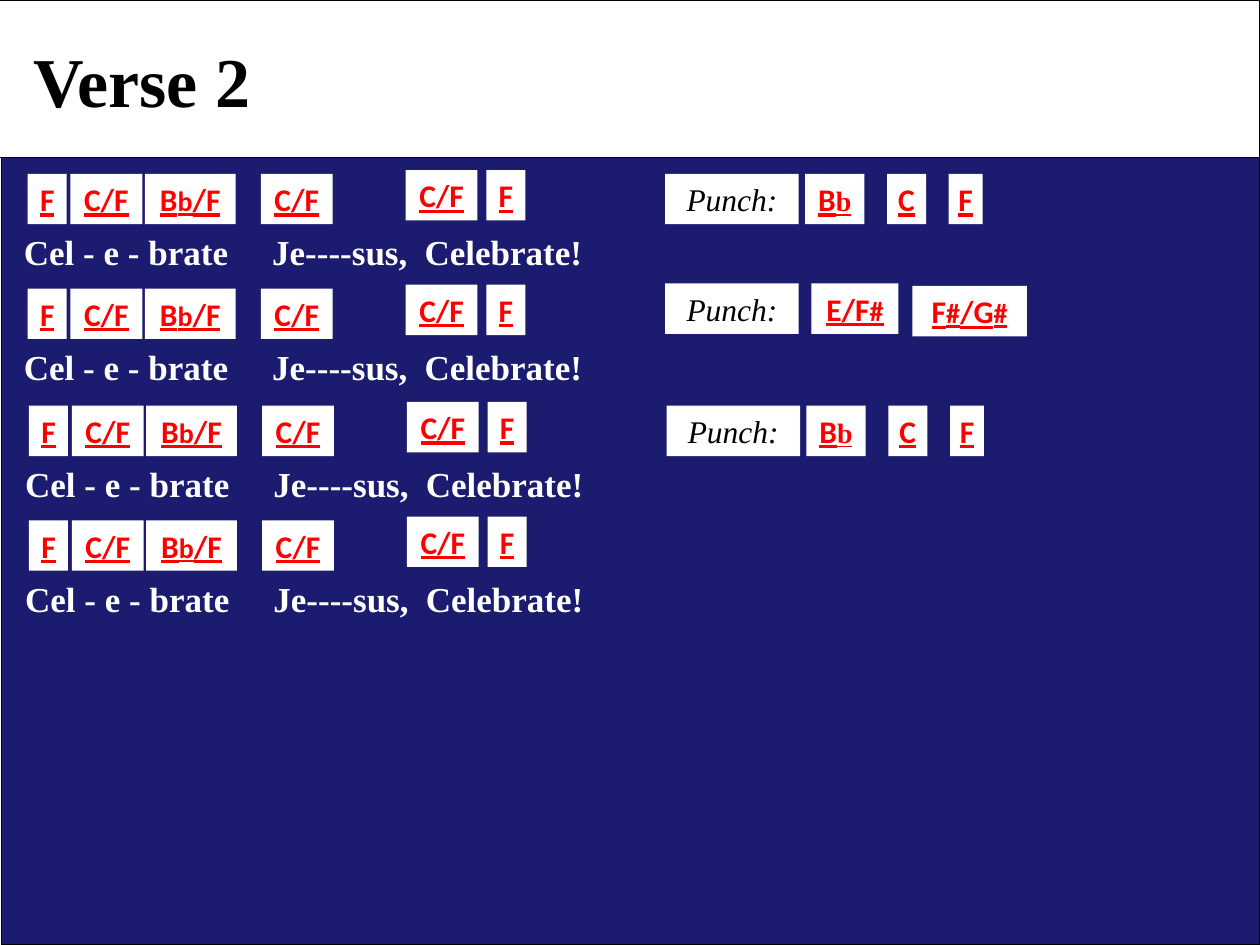
from dataclasses import dataclass
from itertools import groupby

from lxml import etree
from pptx import Presentation
from pptx import util as u
from pptx.dml.color import RGBColor
from pptx.enum import shapes, text
from pptx.oxml.ns import qn

SERIF = "Times New Roman"
SANS = "Calibri"
WHITE, BLACK, RED, NAVY = "FFFFFF", "000000", "FF0000", "1B1B6F"
HIGH = 0.4


@dataclass(frozen=True)
class Chord:
    name: str
    left: float
    width: float
    drop: float = 0


@dataclass(frozen=True)
class Line:
    top: float
    shift: float
    punch: tuple[Chord, ...] = ()


BASE = (
    Chord("F", 0.22, 0.31),
    Chord("C/F", 0.56, 0.57),
    Chord("Bb/F", 1.15, 0.72),
    Chord("C/F", 2.07, 0.57),
    Chord("C/F", 3.22, 0.57, -0.03),
    Chord("F", 3.86, 0.31, -0.03),
)
FLAT = (
    Chord("Punch:", 5.28, 1.06),
    Chord("Bb", 6.39, 0.47),
    Chord("C", 7.04, 0.31),
    Chord("F", 7.53, 0.27),
)
SHARP = (
    Chord("Punch:", 5.28, 1.06, -0.04),
    Chord("E/F#", 6.44, 0.69, -0.04),
    Chord("F#/G#", 7.24, 0.91, -0.02),
)
LINES = (
    Line(1.38, 0, FLAT),
    Line(2.29, 0, SHARP),
    Line(3.22, 0.01, FLAT),
    Line(4.13, 0.01),
)
WORDS = ("Cel - e - brate", "Je----sus,", "Celebrate!")
STOPS = (1.97, 3.18)


def tint(code: str) -> RGBColor:
    return RGBColor.from_string(code)


def box(slide, left: float, top: float, width: float, height: float,
        fill: str = WHITE, line: str | None = None):
    shape = slide.shapes.add_shape(
        shapes.MSO_SHAPE.RECTANGLE,
        u.Inches(left), u.Inches(top), u.Inches(width), u.Inches(height))
    shape.shadow.inherit = False
    shape.fill.solid()
    shape.fill.fore_color.rgb = tint(fill)
    if line:
        shape.line.color.rgb = tint(line)
        shape.line.width = u.Pt(0.75)
    else:
        shape.line.fill.background()
    return shape


def write(shape, words: str, *, size: float, font: str = SERIF, color: str = BLACK,
          bold: bool = False, italic: bool = False, under: bool = False,
          align=text.PP_ALIGN.LEFT, wrap: bool = True):
    frame = shape.text_frame
    frame.word_wrap = wrap
    frame.vertical_anchor = text.MSO_ANCHOR.MIDDLE
    para = frame.paragraphs[0]
    para.alignment = align
    run = para.add_run()
    run.text = words
    face = run.font
    face.size, face.name = u.Pt(size), font
    face.bold, face.italic, face.underline = bold, italic, under
    face.color.rgb = tint(color)
    return para


def mark(slide, chord: Chord, line: Line) -> None:
    shape = box(slide, chord.left + line.shift, line.top + chord.drop, chord.width, HIGH)
    center = text.PP_ALIGN.CENTER
    if chord.name == "Punch:":
        write(shape, chord.name, size=18, italic=True, align=center, wrap=False)
        return
    for small, part in groupby(chord.name, lambda sign: sign in "b#"):
        font = SERIF if small and chord.name == "Bb" else SANS
        write(shape, "".join(part), size=16 if small else 18, font=font,
              color=RED, bold=True, under=True, align=center, wrap=False)


def sing(slide, line: Line) -> None:
    shape = slide.shapes.add_textbox(
        u.Inches(0.02 + line.shift), u.Inches(line.top + HIGH), u.Inches(10), u.Inches(0.44))
    shape.text_frame.margin_left = u.Inches(0.17)
    para = write(shape, "\t".join(WORDS), size=20, color=WHITE, bold=True)
    tabs = etree.SubElement(para._p.get_or_add_pPr(), qn("a:tabLst"))
    for stop in STOPS:
        etree.SubElement(tabs, qn("a:tab"), pos=str(u.Inches(stop)), algn="l")


def main() -> None:
    deck = Presentation()
    deck.slide_width, deck.slide_height = u.Inches(10), u.Inches(7.5)
    slide = deck.slides.add_slide(deck.slide_layouts[6])
    box(slide, 0.01, 1.25, 9.99, 6.25, NAVY, BLACK)
    box(slide, -0.01, 0, 10.01, 1.25, WHITE, BLACK)
    title = box(slide, 0.17, 0.25, 3.33, 0.77)
    write(title, "Verse 2", size=40, bold=True)
    for line in LINES:
        sing(slide, line)
        for chord in BASE + line.punch:
            mark(slide, chord, line)
    deck.save("out.pptx")


if __name__ == "__main__":
    main()
